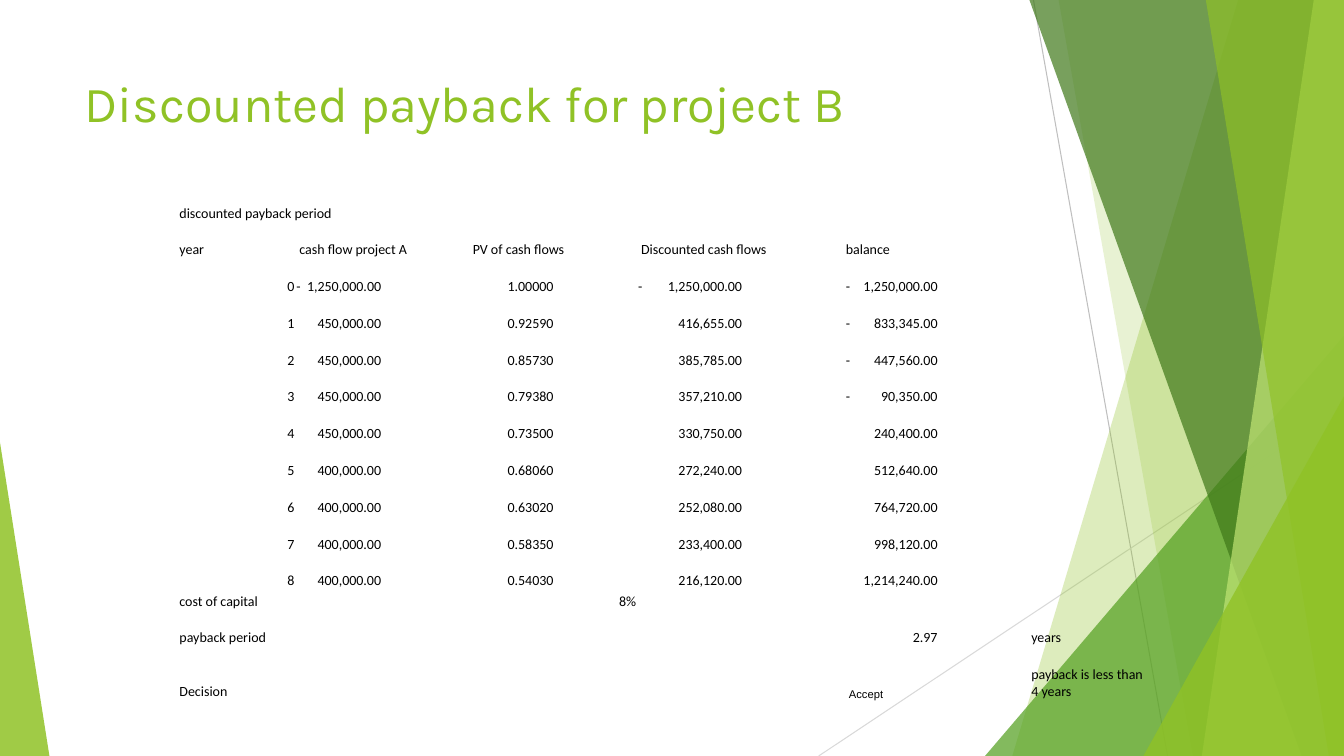
from lxml import etree
from pptx import Presentation
from pptx import util as u
from pptx.dml.color import RGBColor
from pptx.enum import shapes, text
from pptx.oxml import ns

LIME = RGBColor(0x90, 0xC2, 0x26)
PALE_LIME = RGBColor(0xC0, 0xE4, 0x74)
GREEN = RGBColor(0x54, 0xA0, 0x21)
FOREST = RGBColor(0x3F, 0x78, 0x19)
GREY = RGBColor(0xBF, 0xBF, 0xBF)
LIGHT_GREY = RGBColor(0xD9, 0xD9, 0xD9)
BLACK = RGBColor(0, 0, 0)

COLUMNS, ROWS = 13.33, 7.5
LABEL_INDENT = 0.04
CELL_INSET = 0.01
TABLE_COLUMNS = [1.19, 1.72, 1.67, 2.06, 1.84, 1.19]
VALUE_EDGES = [None, 0.84, 0.83, 1.03, 0.91, None]
ROW_HEIGHT, SHORT_ROW, TALL_ROW = 0.36, 0.2, 0.54

HEADINGS = ["year", "cash flow project A", "PV of cash flows",
            "Discounted cash flows", "balance"]
YEARS = [
    ("- 1,250,000.00", "1.00000", "- 1,250,000.00", "- 1,250,000.00"),
    ("450,000.00", "0.92590", "416,655.00", "- 833,345.00"),
    ("450,000.00", "0.85730", "385,785.00", "- 447,560.00"),
    ("450,000.00", "0.79380", "357,210.00", "- 90,350.00"),
    ("450,000.00", "0.73500", "330,750.00", "240,400.00"),
    ("400,000.00", "0.68060", "272,240.00", "512,640.00"),
    ("400,000.00", "0.63020", "252,080.00", "764,720.00"),
    ("400,000.00", "0.58350", "233,400.00", "998,120.00"),
    ("400,000.00", "0.54030", "216,120.00", "1,214,240.00"),
]


class SlideBuilder:
    def __init__(self, deck):
        self.column = deck.slide_width / COLUMNS
        self.row = deck.slide_height / ROWS
        self.page = deck.slides.add_slide(deck.slide_layouts[6])

    def x(self, columns):
        return u.Emu(round(columns * self.column))

    def y(self, rows):
        return u.Emu(round(rows * self.row))

    def area(self, left, top, width, height):
        return self.x(left), self.y(top), self.x(width), self.y(height)

    def style(self, paragraph, size, face, color):
        paragraph.font.size = u.Pt(size)
        paragraph.font.name = face
        paragraph.font.color.rgb = color

    def paint(self, shape, color, opacity):
        shape.shadow.inherit = False
        shape.line.fill.background()
        shape.fill.solid()
        shape.fill.fore_color.rgb = color
        tint = shape.fill._xPr.find(".//" + ns.qn("a:srgbClr"))
        etree.SubElement(tint, ns.qn("a:alpha")).set("val", str(opacity * 1000))

    def line(self, x1, y1, x2, y2, color):
        line = self.page.shapes.add_connector(
            shapes.MSO_CONNECTOR.STRAIGHT,
            self.x(x1), self.y(y1), self.x(x2), self.y(y2))
        line.line.color.rgb = color
        line.line.width = u.Pt(0.75)
        etree.SubElement(line._element.spPr, ns.qn("a:effectLst"))

    def ribbon(self, top_left, bottom_left, color, opacity):
        outline = self.page.shapes.build_freeform(self.x(top_left), 0)
        outline.add_line_segments([
            (self.x(COLUMNS), 0), (self.x(COLUMNS), self.y(ROWS)),
            (self.x(bottom_left), self.y(ROWS))])
        self.paint(outline.convert_to_shape(), color, opacity)

    def triangle(self, left, top, width, apex, color, opacity):
        shape = self.page.shapes.add_shape(
            shapes.MSO_SHAPE.ISOSCELES_TRIANGLE,
            *self.area(left, top, width, ROWS - top))
        shape.adjustments[0] = apex
        self.paint(shape, color, opacity)

    def title(self, words, left, top, width, height):
        box = self.page.shapes.add_textbox(*self.area(left, top, width, height))
        box.text_frame.word_wrap = True
        para = box.text_frame.paragraphs[0]
        para.text = words
        self.style(para, 36, "Karla", LIME)

    def table(self, left, top, widths, heights):
        frame = self.page.shapes.add_table(
            len(heights), len(widths),
            *self.area(left, top, sum(widths), sum(heights)))
        table = frame.table
        table.first_row = table.horz_banding = False
        style_id = table._tbl.tblPr.find(ns.qn("a:tableStyleId"))
        style_id.text = "{2D5ABB26-0587-4C30-8999-92F81FD0307C}"
        for column, width in zip(table.columns, widths):
            column.width = self.x(width)
        for row, height in zip(table.rows, heights):
            row.height = self.y(height)
        for cell in table.iter_cells():
            cell.fill.background()
            cell.vertical_anchor = text.MSO_ANCHOR.BOTTOM
            cell.margin_left = cell.margin_right = self.x(CELL_INSET)
            cell.margin_top, cell.margin_bottom = self.y(CELL_INSET), 0
            ending = cell.text_frame.paragraphs[0]._p.get_or_add_endParaRPr()
            ending.set("sz", "1000")
        return table

    def label(self, cell, words, indent=LABEL_INDENT, right=False,
              size=10, face="Calibri"):
        cell.margin_left = self.x(indent)
        para = cell.text_frame.paragraphs[0]
        para.text = words
        if right:
            para.alignment = text.PP_ALIGN.RIGHT
        self.style(para, size, face, BLACK)

    def value(self, cell, amount, edge):
        sign, number = amount.split() if " " in amount else ("", amount)
        para = cell.text_frame.paragraphs[0]
        para.text = f"{sign}\t{number}"
        tabs = etree.SubElement(para._p.get_or_add_pPr(), ns.qn("a:tabLst"))
        etree.SubElement(tabs, ns.qn("a:tab"), pos=str(self.x(edge)), algn="r")
        self.style(para, 10, "Calibri", BLACK)


def draw_backdrop(slide):
    slide.line(10.25, 0, 11.58, ROWS, GREY)
    slide.line(COLUMNS, 4.03, 8.12, ROWS, LIGHT_GREY)
    slide.ribbon(12.28, 10.04, LIME, 30)
    slide.ribbon(10.5, 11.83, LIME, 20)
    slide.triangle(9.77, 3.33, 3.56, 1, GREEN, 72)
    slide.ribbon(10.21, 12.91, FOREST, 70)
    slide.ribbon(13.03, 11.92, PALE_LIME, 70)
    slide.ribbon(11.96, 13.18, LIME, 65)
    slide.triangle(11.34, 3.93, 1.99, 1, LIME, 80)
    slide.triangle(0, 4.39, 0.49, 0, LIME, 85)


def draw_payback(slide):
    year_rows = [ROW_HEIGHT + 0.005] * (len(YEARS) + 1)
    heights = [SHORT_ROW, *year_rows, SHORT_ROW, ROW_HEIGHT, TALL_ROW]
    table = slide.table(1.74, 2, TABLE_COLUMNS, heights)
    cost, payback, decision = range(len(heights) - 3, len(heights))
    for row, last in ((0, 2), (cost, 1), (payback, 1)):
        table.cell(row, 0).merge(table.cell(row, last))

    slide.label(table.cell(0, 0), "discounted payback period")
    for column, heading in enumerate(HEADINGS):
        indent = CELL_INSET if heading == "balance" else LABEL_INDENT
        slide.label(table.cell(1, column), heading, indent)
    for year, amounts in enumerate(YEARS):
        slide.label(table.cell(year + 2, 0), str(year), right=True)
        for column, amount in enumerate(amounts, 1):
            slide.value(table.cell(year + 2, column), amount, VALUE_EDGES[column])

    slide.label(table.cell(cost, 0), "cost of capital")
    slide.label(table.cell(cost, 2), "8%", right=True)
    slide.label(table.cell(payback, 0), "payback period")
    slide.value(table.cell(payback, 4), "2.97", VALUE_EDGES[4])
    slide.label(table.cell(payback, 5), "years", CELL_INSET)
    slide.label(table.cell(decision, 0), "Decision")
    slide.label(table.cell(decision, 4), "Accept", size=8, face="Arial")
    slide.label(table.cell(decision, 5), "payback is less than 4 years", CELL_INSET)


def main():
    deck = Presentation()
    deck.slide_width, deck.slide_height = u.Inches(COLUMNS), u.Inches(ROWS)
    slide = SlideBuilder(deck)
    draw_backdrop(slide)
    slide.title("Discounted payback for project B", 0.74, 0.67, 9.4, 1.44)
    draw_payback(slide)
    deck.save("out.pptx")


if __name__ == "__main__":
    main()
